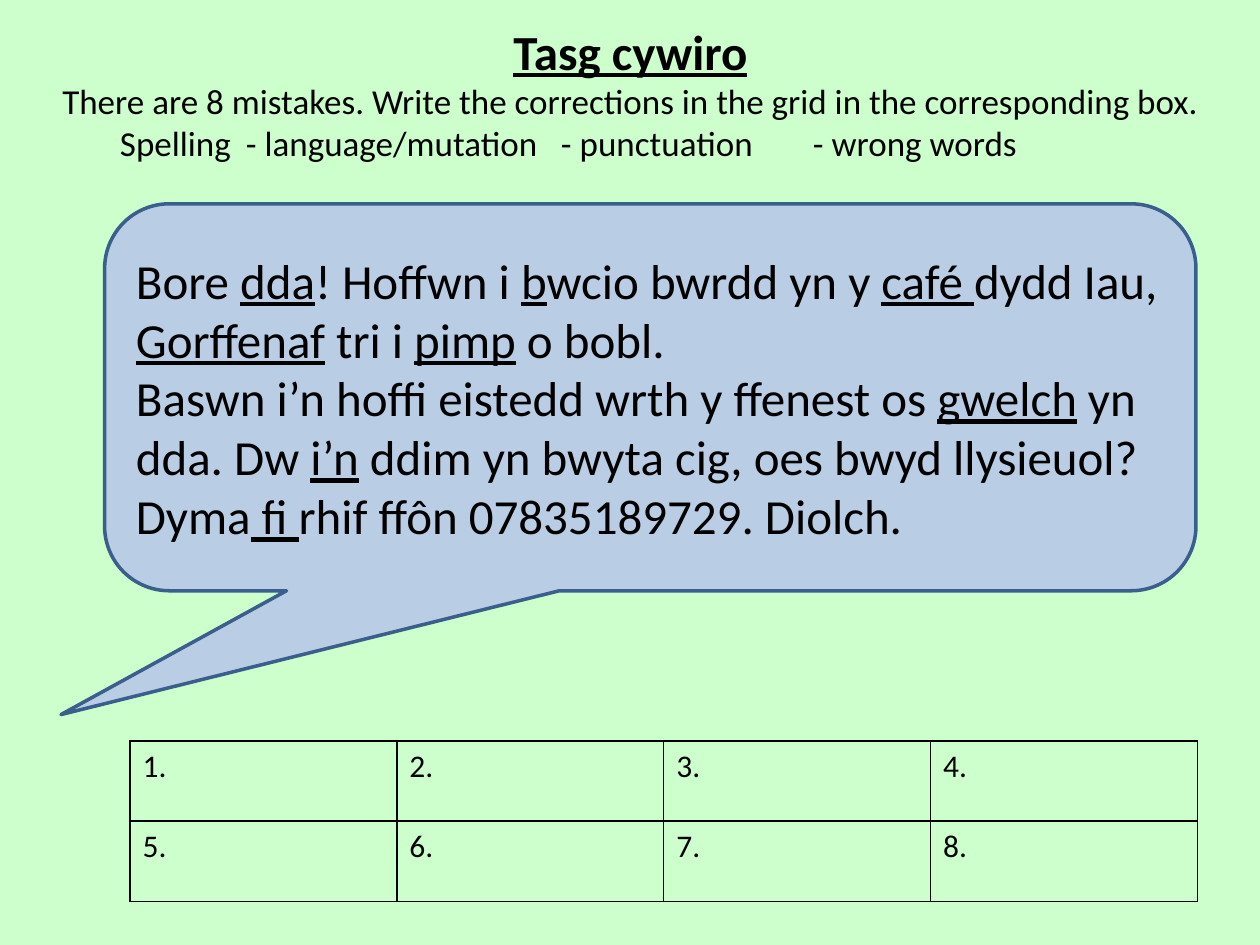
import pptx
import pptx.dml.color
import pptx.enum.shapes
import pptx.enum.text
import pptx.oxml
import pptx.oxml.ns
import pptx.util
from lxml import etree
from pptx.util import Cm

COLOURS = {"background": "CCFFCC", "bubble": "B9CDE5", "outline": "3A5F8C", "text": "000000"}
HEADING = {"size": pptx.util.Pt(28), "bold": True, "underline": True}
INSTRUCTION = {"size": pptx.util.Pt(20)}
MESSAGE = {"size": pptx.util.Pt(28)}
ANSWER = {"size": pptx.util.Pt(18)}

MISTAKE_TYPES = ["Spelling", "- language/mutation", "- punctuation", "- wrong words"]
MISTAKE_TYPE_POSITIONS = [Cm(1.46), Cm(5.45), Cm(12.74), Cm(17.88)]

# Underlined words stand between underscores.
MESSAGE_LINES = [
    "Bore _dda_! Hoffwn i _b_wcio bwrdd yn y _café _dydd Iau, _Gorffenaf_ tri i _pimp_ o bobl.",
    "Baswn i’n hoffi eistedd wrth y ffenest os _gwelch_ yn dda. "
    "Dw _i’n_ ddim yn bwyta cig, oes bwyd llysieuol?",
    "Dyma_ fi _rhif ffôn 07835189729. Diolch.",
]


def colour(name):
    return pptx.dml.color.RGBColor.from_string(COLOURS[name])


def add_run(paragraph, text, formats):
    run = paragraph.add_run()
    run.text = text
    run.font.name = "Calibri"
    run.font.color.rgb = colour("text")
    for attribute, value in formats.items():
        setattr(run.font, attribute, value)


def next_paragraph(frame, index, alignment):
    paragraph = frame.add_paragraph() if index else frame.paragraphs[0]
    paragraph.alignment = alignment
    return paragraph


def set_tab_stops(paragraph, positions):
    """Indent the paragraph to the first position and set tabs at the others."""
    properties = paragraph._p.get_or_add_pPr()
    properties.set("marL", str(positions[0]))
    properties.set("indent", "0")
    tabs = etree.SubElement(properties, pptx.oxml.ns.qn("a:tabLst"))
    for position in positions[1:]:
        etree.SubElement(tabs, pptx.oxml.ns.qn("a:tab"), pos=str(position), algn="l")


def add_heading(slide):
    box = slide.shapes.add_textbox(Cm(0.71), Cm(0.53), Cm(24), Cm(3.53))
    frame = box.text_frame
    layout = {
        "word_wrap": True,
        "vertical_anchor": pptx.enum.text.MSO_ANCHOR.MIDDLE,
        "margin_top": 0,
        "margin_bottom": Cm(0.86),
    }
    for attribute, value in layout.items():
        setattr(frame, attribute, value)
    centre, left = pptx.enum.text.PP_ALIGN.CENTER, pptx.enum.text.PP_ALIGN.LEFT
    lines = [
        ("Tasg cywiro", HEADING, centre),
        ("There are 8 mistakes. Write the corrections in the grid in the corresponding box.",
         INSTRUCTION, centre),
        ("\t".join(MISTAKE_TYPES), INSTRUCTION, left),
    ]
    for index, (text, formats, alignment) in enumerate(lines):
        paragraph = next_paragraph(frame, index, alignment)
        add_run(paragraph, text, formats)
    set_tab_stops(paragraph, MISTAKE_TYPE_POSITIONS)


def add_speech_bubble(slide):
    bubble = slide.shapes.add_shape(
        pptx.enum.shapes.MSO_SHAPE.ROUNDED_RECTANGULAR_CALLOUT,
        Cm(2.11), Cm(4.11), Cm(22), Cm(7.8))
    for index, value in enumerate([-0.54, 0.82, 0.167]):
        bubble.adjustments[index] = value
    bubble.shadow.inherit = False
    bubble.fill.solid()
    bubble.fill.fore_color.rgb = colour("bubble")
    bubble.line.color.rgb = colour("outline")
    bubble.line.width = pptx.util.Pt(2)
    frame = bubble.text_frame
    frame.word_wrap = True
    frame.vertical_anchor = pptx.enum.text.MSO_ANCHOR.MIDDLE
    for index, line in enumerate(MESSAGE_LINES):
        paragraph = next_paragraph(frame, index, pptx.enum.text.PP_ALIGN.LEFT)
        for part, text in enumerate(line.split("_")):
            add_run(paragraph, text, {**MESSAGE, "underline": part % 2 == 1})


def set_cell_borders(cell):
    properties = cell._tc.get_or_add_tcPr()
    for index, side in enumerate(["lnL", "lnR", "lnT", "lnB"]):
        border = pptx.oxml.parse_xml(
            f'<a:{side} {pptx.oxml.ns.nsdecls("a")} w="12700"><a:solidFill>'
            f'<a:srgbClr val="{COLOURS["text"]}"/></a:solidFill></a:{side}>')
        properties.insert(index, border)


def add_answer_grid(slide, rows=2, columns=4):
    frame = slide.shapes.add_table(rows, columns, Cm(2.62), Cm(14.94), Cm(21.52), Cm(3.23))
    table = frame.table
    table.first_row = table.horz_banding = False
    for number, cell in enumerate(table.iter_cells(), start=1):
        cell.fill.background()
        set_cell_borders(cell)
        add_run(cell.text_frame.paragraphs[0], f"{number}.", ANSWER)


def main():
    presentation = pptx.Presentation()
    presentation.slide_width, presentation.slide_height = Cm(25.4), Cm(19.05)
    slide = presentation.slides.add_slide(presentation.slide_layouts[6])
    slide.background.fill.solid()
    slide.background.fill.fore_color.rgb = colour("background")
    add_heading(slide)
    add_answer_grid(slide)
    add_speech_bubble(slide)
    presentation.save("out.pptx")


if __name__ == "__main__":
    main()
